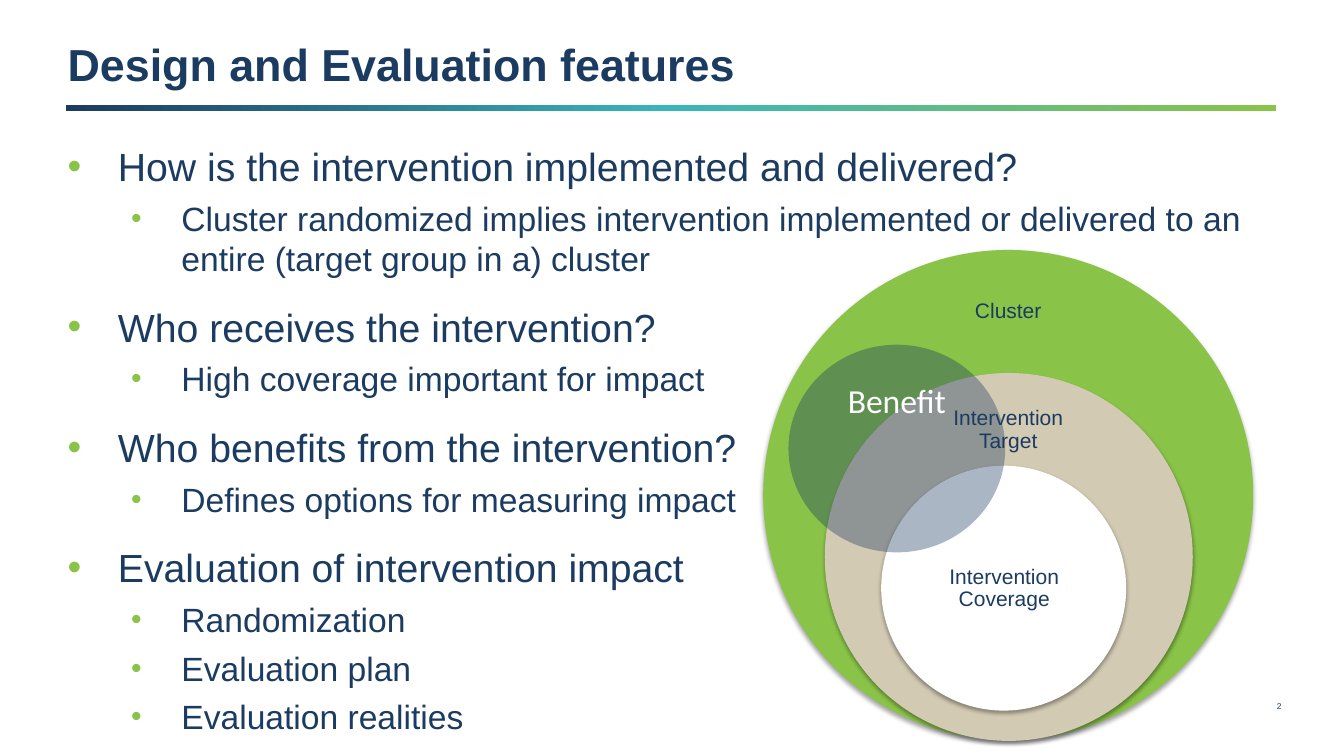
from lxml import etree
from pptx import Presentation
from pptx.dml.color import RGBColor
from pptx.enum.dml import MSO_FILL
from pptx.enum.shapes import MSO_SHAPE
from pptx.enum.text import MSO_ANCHOR, PP_ALIGN
from pptx.oxml.ns import qn
from pptx.util import Inches, Pt

RECT, OVAL = MSO_SHAPE.RECTANGLE, MSO_SHAPE.OVAL
TOP, MIDDLE, BOTTOM = MSO_ANCHOR.TOP, MSO_ANCHOR.MIDDLE, MSO_ANCHOR.BOTTOM
LEFT, CENTER, RIGHT = PP_ALIGN.LEFT, PP_ALIGN.CENTER, PP_ALIGN.RIGHT
NAVY, TEAL, GREEN, SAND, WHITE = "1C3B61", "39B6B9", "89C348", "D2CAB3", "FFFFFF"

POINTS = [
    ("How is the intervention implemented and delivered?",
     ["Cluster randomized implies intervention implemented or delivered "
      "to an entire (target group in a) cluster"]),
    ("Who receives the intervention?", ["High coverage important for impact"]),
    ("Who benefits from the intervention?", ["Defines options for measuring impact"]),
    ("Evaluation of intervention impact",
     ["Randomization", "Evaluation plan", "Evaluation realities"]),
]
RINGS = [
    ("Cluster", GREEN, (0, 0, 4.86), (1.58, 0.25, 1.7, 0.73)),
    ("Intervention Target", SAND, (0.61, 1.22, 3.65), (1.58, 1.45, 1.7, 0.68)),
    ("Intervention Coverage", WHITE, (1.17, 2.14, 2.43), (1.53, 2.75, 1.72, 1.22)),
]


def color(code):
    """Turn a hex string into a colour."""
    return RGBColor.from_string(code)


def node(parent, tag, **attrs):
    """Add a drawing element under a parent."""
    item = etree.SubElement(parent, qn("a:" + tag))
    for key, val in attrs.items():
        item.set(key, str(val))
    return item


def write(para, text, size=15, ink=NAVY, font="Arial", bold=False, align=LEFT,
          line=None, before=0, after=0):
    """Put formatted text in a paragraph."""
    para.alignment = align
    para.line_spacing = line
    para.space_before, para.space_after = Pt(before), Pt(after)
    run = para.add_run()
    run.text = text
    run.font.size, run.font.name, run.font.bold = Pt(size), font, bold
    run.font.color.rgb = color(ink)


def frame(slide, box, inset=0, anchor=TOP):
    """Add a wrapping text box and return its frame."""
    area = slide.shapes.add_textbox(*map(Inches, box)).text_frame
    area.word_wrap = True
    area.vertical_anchor = anchor
    area.margin_left = area.margin_right = Inches(inset)
    area.margin_top = area.margin_bottom = Inches(inset)
    return area


def solid(slide, kind, box, fill):
    """Add a filled shape with no line or shadow."""
    shape = slide.shapes.add_shape(kind, *map(Inches, box))
    shape.shadow.inherit = False
    shape.line.fill.background()
    shape.fill.solid()
    shape.fill.fore_color.rgb = color(fill)
    return shape


def shade(shape):
    """Give a shape a soft shadow below it."""
    effects = shape._element.spPr.find(qn("a:effectLst"))
    outer = node(effects, "outerShdw", blurRad=Pt(3.1), dist=Pt(1.8),
                 dir=5400000, rotWithShape=0)
    node(node(outer, "srgbClr", val="000000"), "alpha", val=35000)


def bullet(para, left, scale):
    """Set a hanging green bullet on a paragraph."""
    props = para._p.get_or_add_pPr()
    props.set("marL", str(Inches(left)))
    props.set("indent", str(Inches(-0.5)))
    node(node(props, "buClr"), "srgbClr", val=GREEN)
    node(props, "buSzPct", val=scale * 1000)
    node(props, "buFont", typeface="Arial")
    node(props, "buChar", char="•")


def header(slide, left, top, width):
    """Draw the title above its gradient rule."""
    area = frame(slide, (left, top, width, 0.75), anchor=BOTTOM)
    write(area.paragraphs[0], "Design and Evaluation features", size=32, bold=True)
    rule = solid(slide, RECT, (left - 0.02, top + 0.89, width + 0.02, 0.06), NAVY)
    props = rule._element.spPr
    old = props.find(qn("a:solidFill"))
    grad = etree.Element(qn("a:gradFill"))
    stops = node(grad, "gsLst")
    for spot, code in enumerate((NAVY, TEAL, GREEN)):
        node(node(stops, "gs", pos=spot * 50000), "srgbClr", val=code)
    node(grad, "lin", ang=0, scaled=0)
    props.replace(old, grad)


def outline(slide, box):
    """List the questions with their details."""
    area = frame(slide, box)
    para = area.paragraphs[0]
    for index, (head, details) in enumerate(POINTS):
        if index:
            para = area.add_paragraph()
        write(para, head, size=28, line=Pt(36), before=6)
        bullet(para, 0.5, 100)
        for detail in details:
            para = area.add_paragraph()
            para.level = 1
            write(para, detail, size=24, before=6, after=9 if len(details) == 1 else 0)
            bullet(para, 1.13, 90)


def diagram(slide, left, top):
    """Draw the nested rings and the benefit circle."""
    for text, fill, (x, y, size), (tx, ty, wide, high) in RINGS:
        shade(solid(slide, OVAL, (left + x, top + y, size, size), fill))
        area = frame(slide, (left + tx, top + ty, wide, high), 0.12, MIDDLE)
        write(area.paragraphs[0], text, align=CENTER, line=0.9)
    benefit = solid(slide, OVAL, (left + 0.25, top + 0.94, 2.15, 2.06), NAVY)
    tint = benefit._element.spPr.find(qn("a:solidFill"))[0]
    node(tint, "alpha", val=37000)
    area = benefit.text_frame
    area.word_wrap = False
    area.vertical_anchor = TOP
    write(area.paragraphs[0], "Benefit", size=24, ink=WHITE, font="Calibri", align=CENTER)


def footer(slide, box):
    """Write the slide number."""
    area = frame(slide, box, 0.05)
    area.margin_right = Inches(0.1)
    write(area.paragraphs[0], "2", size=6, align=RIGHT)


def main():
    """Build and save the slide."""
    deck = Presentation()
    deck.slide_width, deck.slide_height = Inches(13.33), Inches(7.5)
    slide = deck.slides.add_slide(deck.slide_layouts[6])
    header(slide, 0.67, 0.15, 11.99)
    outline(slide, (0.67, 1.38, 12, 5.3))
    footer(slide, (12.25, 6.91, 0.56, 0.44))
    diagram(slide, 7.57, 2.48)
    deck.save("out.pptx")


if __name__ == "__main__":
    main()
